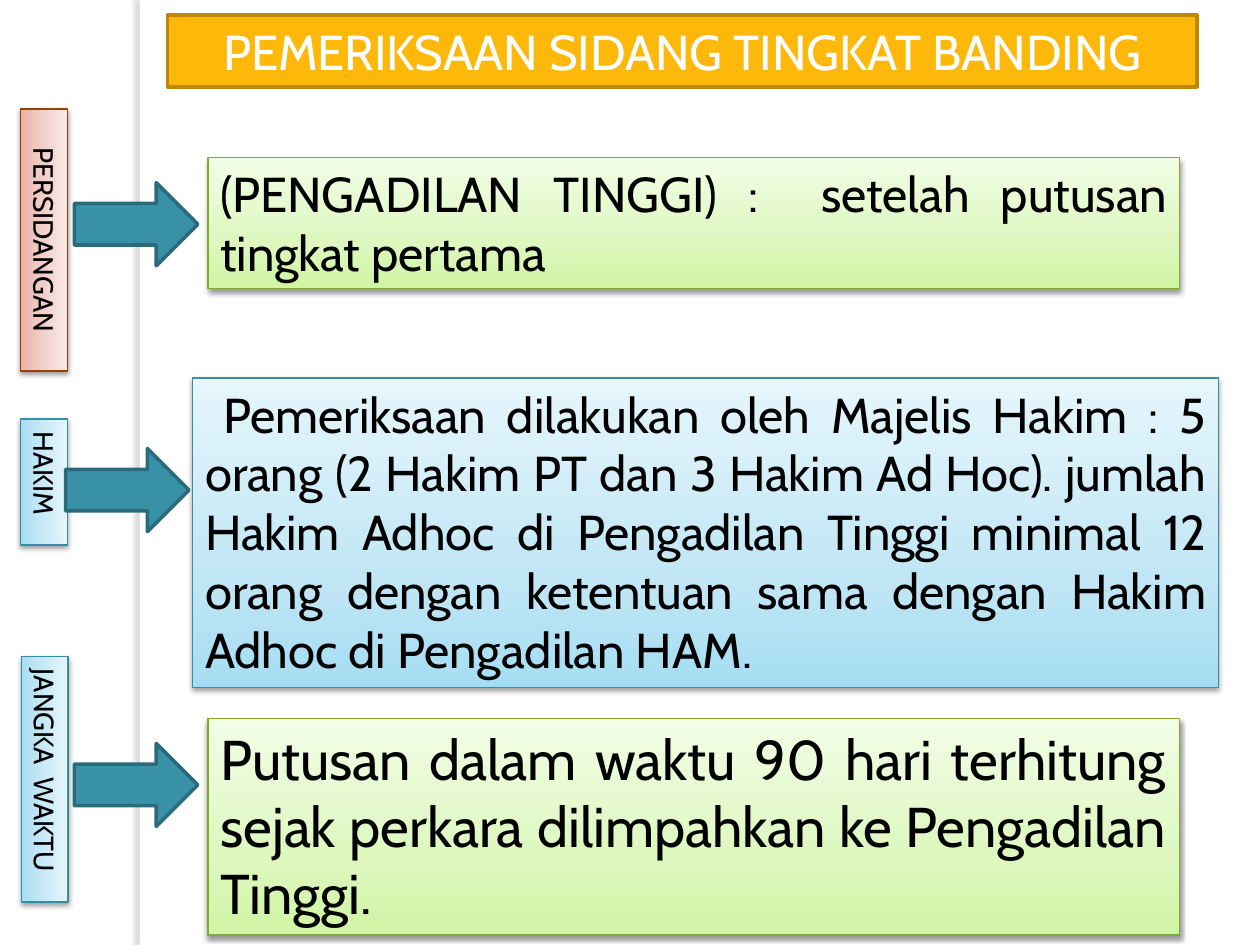
from copy import deepcopy

from lxml.etree import SubElement
from pptx import Presentation
from pptx.dml.color import RGBColor
from pptx.enum.shapes import MSO_SHAPE
from pptx.enum.text import MSO_ANCHOR, MSO_AUTO_SIZE, PP_ALIGN
from pptx.oxml.ns import qn
from pptx.util import Inches, Pt

COLORS = {
    "white": "FFFFFF", "black": "000000", "strip_shadow": "736F63",
    "title": "FEB80A", "title_line": "BC8807",
    "arrow": "3891A7", "arrow_line": "296B7C",
    "red_line": "964101", "blue_line": "348FA6", "green_line": "82A92F",
    "red_0": "EAB1A6", "red_35": "EFC9C2", "red_100": "FAEAE7",
    "blue_0": "A5DDF3", "blue_35": "C1E6F5", "blue_100": "E6F6FC",
    "green_0": "D0F5A3", "green_35": "DDF7BF", "green_100": "F2FDE6",
}


class SlideBuilder:
    font = "Cabin"
    stops = (0, 35, 100)

    def __init__(self, slide):
        self.s = slide

    def color(self, name):
        return RGBColor.from_string(COLORS[name])

    def shape(self, kind, box, fill=None, line=None, width=0.75):
        sp = self.s.shapes.add_shape(kind, *(Inches(v) for v in box))
        sp.shadow.inherit = False
        if fill:
            sp.fill.solid()
            sp.fill.fore_color.rgb = self.color(fill)
        if line:
            sp.line.color.rgb = self.color(line)
            sp.line.width = Pt(width)
        else:
            sp.line.fill.background()
        return sp

    def shadow(self, sp, color, alpha, blur, dist, angle):
        effects = sp._element.spPr.find(qn("a:effectLst"))
        shadow = SubElement(effects, qn("a:outerShdw"), blurRad=str(Pt(blur)),
                            dist=str(Pt(dist)), dir=str(angle * 60000),
                            rotWithShape="0")
        clr = SubElement(shadow, qn("a:srgbClr"), val=COLORS[color])
        SubElement(clr, qn("a:alpha"), val=str(alpha * 1000))

    def gradient(self, sp, tone):
        sp.fill.gradient()
        sp.fill.gradient_angle = 90
        gs_list = sp._element.spPr.find(".//" + qn("a:gsLst"))
        gs_list.append(deepcopy(gs_list[-1]))
        for stop, pos in zip(sp.fill.gradient_stops, self.stops):
            stop.color.rgb = self.color(f"{tone}_{pos}")
            stop.position = pos / 100

    def text(self, sp, runs, color="black", align=PP_ALIGN.JUSTIFY):
        tf = sp.text_frame
        tf.word_wrap = True
        tf.auto_size = MSO_AUTO_SIZE.SHAPE_TO_FIT_TEXT
        tf.vertical_anchor = MSO_ANCHOR.TOP
        p = tf.paragraphs[0]
        p.alignment = align
        for text, size in runs:
            r = p.add_run()
            r.text = text
            r.font.name = self.font
            r.font.size = Pt(size)
            r.font.color.rgb = self.color(color)
        return p

    def strip(self, box):
        sp = self.shape(MSO_SHAPE.RECTANGLE, box, "white")
        self.shadow(sp, "strip_shadow", 25, 3, 3, 180)

    def title(self, box, text):
        sp = self.shape(MSO_SHAPE.RECTANGLE, box, "title", "title_line", 2)
        self.text(sp, [(text, 28)], "white", PP_ALIGN.CENTER)

    def panel(self, box, tone, runs, align=PP_ALIGN.JUSTIFY):
        sp = self.shape(MSO_SHAPE.RECTANGLE, box, line=f"{tone}_line")
        self.gradient(sp, tone)
        self.shadow(sp, "black", 38, 3.1, 1.6, 90)
        return sp, self.text(sp, runs, align=align)

    def side_label(self, left, top, length, tone, text, align=PP_ALIGN.JUSTIFY):
        box = (left, top, length, 0.37)
        sp, p = self.panel(box, tone, [(text, 16)], align)
        sp.rotation = 90
        before = SubElement(p._p.get_or_add_pPr(), qn("a:spcBef"))
        SubElement(before, qn("a:spcPct"), val="20000")

    def arrow(self, left, top):
        self.shape(MSO_SHAPE.RIGHT_ARROW, (left, top, 0.98, 0.66),
                   "arrow", "arrow_line", 2)


def main():
    prs = Presentation()
    prs.slide_width, prs.slide_height = Inches(10), Inches(7.5)
    b = SlideBuilder(prs.slides.add_slide(prs.slide_layouts[6]))

    b.strip((1.11, 0, 0.08, 7.5))
    b.title((1.33, 0.12, 8.17, 0.57), "PEMERIKSAAN SIDANG TINGKAT BANDING")

    b.side_label(-0.69, 1.72, 2.08, "red", "PERSIDANGAN", PP_ALIGN.CENTER)
    b.side_label(-0.15, 3.64, 1, "blue", "HAKIM ")
    b.panel((1.65, 1.25, 7.71, 1.04), "green", [
        ("(PENGADILAN TINGGI) :  setelah putusan tingkat pertama ", 28)])
    b.panel((1.53, 3, 8.14, 2.46), "blue", [
        (" ", 20),
        ("Pemeriksaan dilakukan oleh Majelis Hakim : 5 orang "
         "(2 Hakim PT dan 3 Hakim Ad Hoc). jumlah Hakim Adhoc di "
         "Pengadilan Tinggi minimal 12 orang dengan ketentuan sama "
         "dengan Hakim Adhoc di Pengadilan HAM.", 28)])
    b.panel((1.65, 5.7, 7.71, 1.72), "green", [
        ("Putusan dalam waktu 90 hari terhitung sejak perkara "
         "dilimpahkan ke Pengadilan Tinggi.", 32)])
    b.side_label(-0.62, 6, 1.95, "blue", "JANGKA  WAKTU")

    for left, top in ((0.59, 1.45), (0.52, 3.56), (0.59, 5.9)):
        b.arrow(left, top)

    prs.save("out.pptx")


if __name__ == "__main__":
    main()
